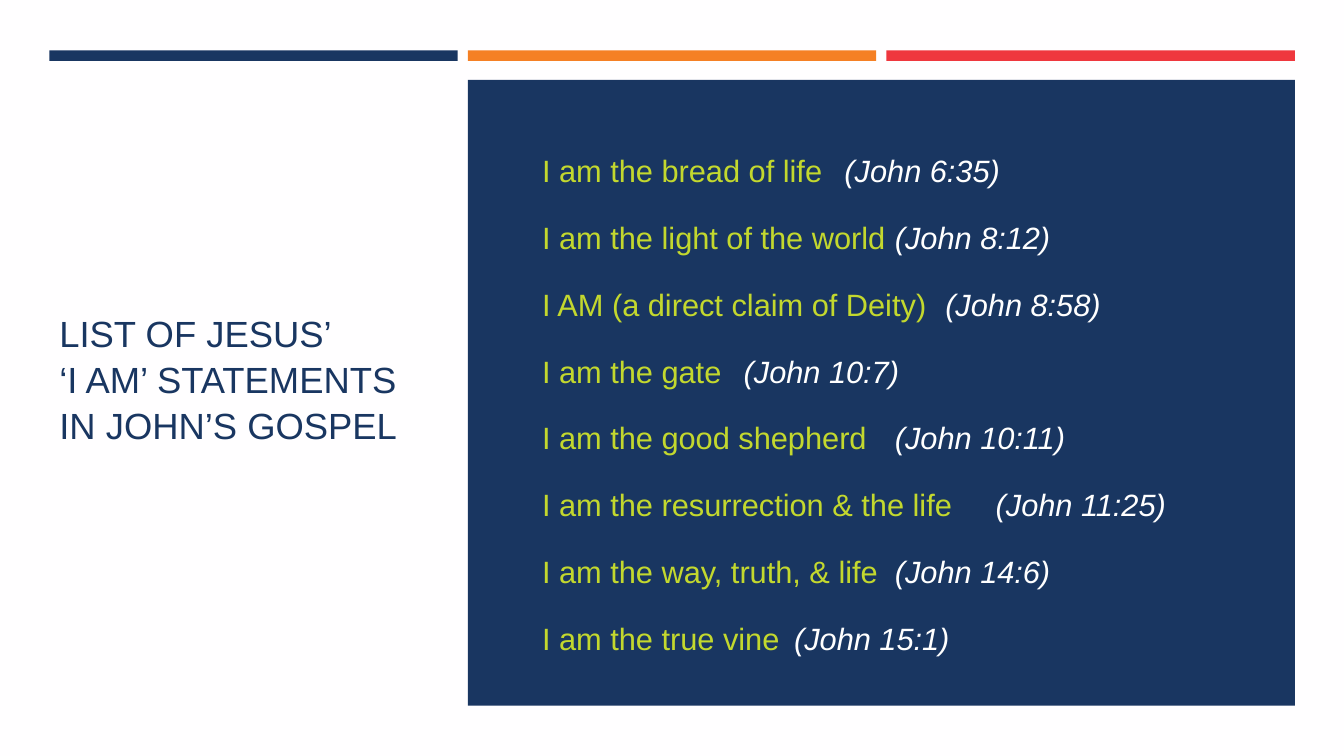
"""Build the slide listing the 'I am' statements in John's Gospel."""
from pptx import Presentation
from pptx.dml.color import RGBColor
from pptx.enum.shapes import MSO_SHAPE
from pptx.enum.text import MSO_ANCHOR, MSO_AUTO_SIZE, PP_ALIGN
from pptx.util import Pt
from lxml.etree import SubElement
from pptx.oxml.ns import qn

HEADING = "LIST OF JESUS’\v‘I AM’ STATEMENTS IN JOHN’S GOSPEL"
STATEMENTS = [
    ("I am the bread of life", "(John 6:35)"),
    ("I am the light of the world", "(John 8:12)"),
    ("I AM (a direct claim of Deity)", "(John 8:58)"),
    ("I am the gate", "(John 10:7)"),
    ("I am the good shepherd", "(John 10:11)"),
    ("I am the resurrection & the life", "(John 11:25)"),
    ("I am the way, truth, & life", "(John 14:6)"),
    ("I am the true vine", "(John 15:1)"),
]
NAVY, ORANGE, RED = "193661", "F58024", "EF373E"
LIME, WHITE, PAPER = "C3D82E", "FFFFFF", "FFFEFF"
FONT = "Arial"

MARGIN = 35.2
BAR_TOP, BAR_WIDTH, BAR_HEIGHT, BAR_PITCH = 36, 291.7, 7.5, 299
PANEL_LEFT = MARGIN + BAR_PITCH
PANEL_WIDTH = BAR_PITCH + BAR_WIDTH
REFERENCE_TAB = 360
ROW_GAP = 21.3


def paint(target, color):
    target.solid()
    target.fore_color.rgb = RGBColor.from_string(color)


def add_block(slide, left, top, width, height, color):
    block = slide.shapes.add_shape(
        MSO_SHAPE.RECTANGLE, Pt(left), Pt(top), Pt(width), Pt(height))
    block.shadow.inherit = False
    paint(block.fill, color)
    block.line.fill.background()


def place(holder, left, top, width, height, anchor):
    holder.left, holder.top = Pt(left), Pt(top)
    holder.width, holder.height = Pt(width), Pt(height)
    frame = holder.text_frame
    frame.word_wrap = True
    frame.auto_size = MSO_AUTO_SIZE.NONE
    frame.vertical_anchor = anchor
    return frame


def style(paragraph, size, color):
    paragraph.alignment = PP_ALIGN.LEFT
    paragraph.font.name = FONT
    paragraph.font.size = Pt(size)
    paint(paragraph.font.fill, color)


def add_statement(paragraph, statement, reference):
    style(paragraph, 22, LIME)
    paragraph.space_before = Pt(0)
    paragraph.space_after = Pt(ROW_GAP)
    paragraph.add_run().text = statement + "\t"
    citation = paragraph.add_run()
    citation.text = reference
    citation.font.italic = True
    paint(citation.font.fill, WHITE)

    properties = paragraph._p.get_or_add_pPr()
    properties.set("marL", "0")
    properties.set("indent", "0")
    bullet = SubElement(properties, qn("a:buNone"))
    tabs = SubElement(properties, qn("a:tabLst"))
    SubElement(tabs, qn("a:tab"), pos=str(Pt(REFERENCE_TAB)), algn="l")
    bullet.addnext(tabs)
    defaults = properties.find(qn("a:defRPr"))
    if defaults is not None:
        properties.append(defaults)


def main():
    deck = Presentation()
    deck.slide_width, deck.slide_height = Pt(960), Pt(540)
    slide = deck.slides.add_slide(deck.slide_layouts[1])
    paint(slide.background.fill, PAPER)

    title, body = slide.shapes.title, slide.placeholders[1]
    heading = place(title, MARGIN, 84.5, 264, 371, MSO_ANCHOR.MIDDLE)
    heading.text = HEADING
    style(heading.paragraphs[0], 26, NAVY)
    heading.paragraphs[0].line_spacing = 1.05

    for column, color in enumerate((NAVY, ORANGE, RED)):
        add_block(slide, MARGIN + column * BAR_PITCH, BAR_TOP,
                  BAR_WIDTH, BAR_HEIGHT, color)
    add_block(slide, PANEL_LEFT, 57, PANEL_WIDTH, 447, NAVY)

    body.element.getparent().append(body.element)
    rows = place(body, 380, 105, 532, 382, MSO_ANCHOR.TOP)
    for index, (statement, reference) in enumerate(STATEMENTS):
        row = rows.add_paragraph() if index else rows.paragraphs[0]
        add_statement(row, statement, reference)

    deck.save("out.pptx")


if __name__ == "__main__":
    main()
